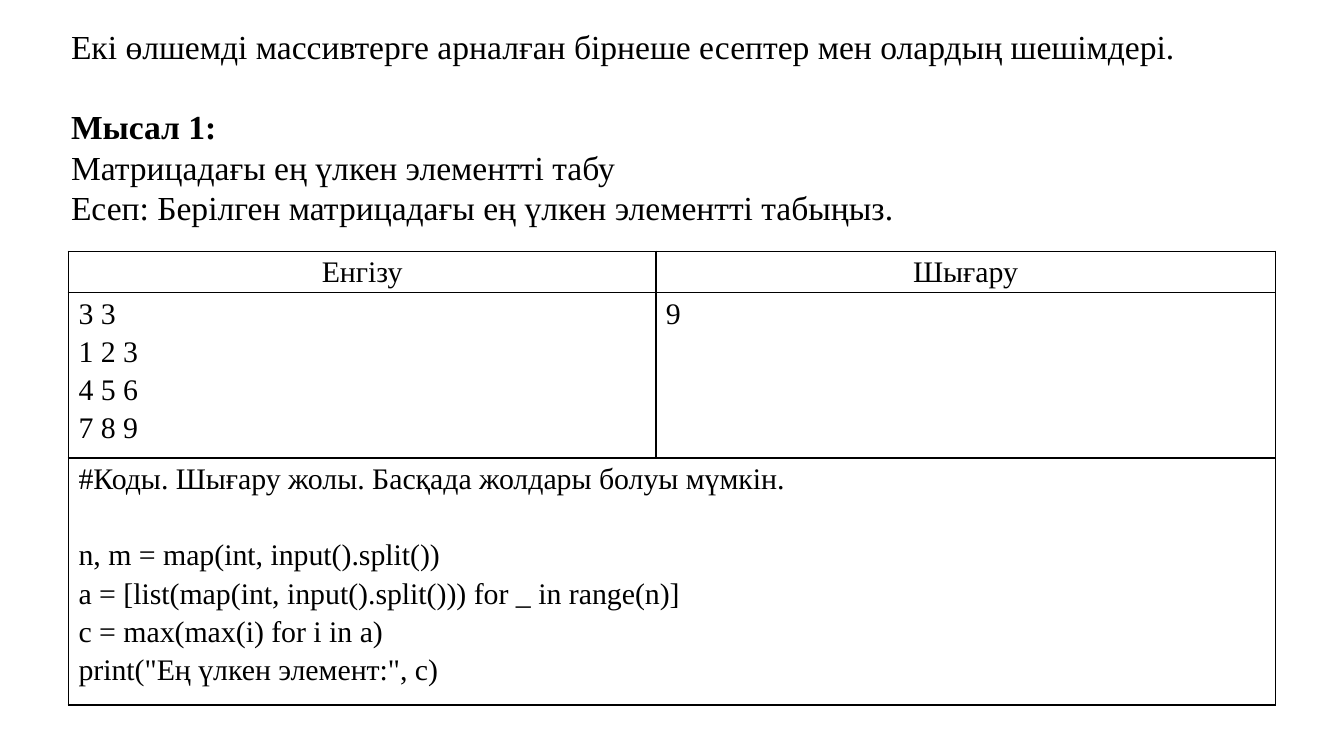
import lxml.etree
import pptx
import pptx.dml.color
import pptx.enum.text
import pptx.oxml.ns
import pptx.util

Inches = pptx.util.Inches
Pt = pptx.util.Pt
FONT = "Times New Roman"
BLACK = "000000"

INTRO = [
    "Екі өлшемді массивтерге арналған бірнеше есептер мен олардың шешімдері.",
    "Мысал 1:",
    "Матрицадағы ең үлкен элементті табу",
    "Есеп: Берілген матрицадағы ең үлкен элементті табыңыз.",
]
HEADERS = ["Енгізу", "Шығару"]
INPUT_LINES = ["3 3", "1 2 3", "4 5 6", "7 8 9"]
OUTPUT_LINES = ["9"]
CODE_LINES = [
    "#Коды. Шығару жолы. Басқада жолдары болуы мүмкін.",
    "n, m = map(int, input().split())",
    "a = [list(map(int, input().split())) for _ in range(n)]",
    "c = max(max(i) for i in a)",
    'print("Ең үлкен элемент:", c)',
]


def color(hex_string):
    return pptx.dml.color.RGBColor.from_string(hex_string)


def write_lines(frame, lines, size, spacing, align=pptx.enum.text.PP_ALIGN.LEFT):
    """Fill the frame with one paragraph per line and return the paragraphs."""
    frame.word_wrap = True
    frame.text = "\n".join(lines)
    for paragraph in frame.paragraphs:
        paragraph.alignment = align
        paragraph.line_spacing = spacing
        paragraph.font.name = FONT
        paragraph.font.size = Pt(size)
        paragraph.font.bold = False
        paragraph.font.color.rgb = color(BLACK)
    return frame.paragraphs


def outline_cell(cell, hex_string, width):
    """Draw all four borders of a cell and leave it unfilled."""
    properties = cell._tc.get_or_add_tcPr()
    qn = pptx.oxml.ns.qn
    for side in ("a:lnL", "a:lnR", "a:lnT", "a:lnB"):
        line = lxml.etree.SubElement(properties, qn(side), w=str(Pt(width)))
        fill = lxml.etree.SubElement(line, qn("a:solidFill"))
        lxml.etree.SubElement(fill, qn("a:srgbClr"), val=hex_string)
    cell.fill.background()


def add_intro(slide, left, top, width, height):
    box = slide.shapes.add_textbox(
        Inches(left), Inches(top), Inches(width), Inches(height))
    paragraphs = write_lines(box.text_frame, INTRO, 18, 1.0)
    example_heading = paragraphs[1]
    example_heading.font.bold = True
    example_heading.space_before = Pt(21.6)


def add_example_table(slide, left, top, column_widths, row_heights):
    table = slide.shapes.add_table(
        len(row_heights), len(column_widths), Inches(left), Inches(top),
        Inches(sum(column_widths)), Inches(sum(row_heights))).table
    table.first_row = False
    table.horz_banding = False
    for column, width in zip(table.columns, column_widths):
        column.width = Inches(width)
    for row, height in zip(table.rows, row_heights):
        row.height = Inches(height)

    # The code spans both columns
    table.cell(2, 0).merge(table.cell(2, 1))
    for cell in table.iter_cells():
        outline_cell(cell, BLACK, 1)
        cell.margin_left = cell.margin_right = Pt(5.4)
        cell.margin_top = cell.margin_bottom = 0

    # Header row
    for column, header in enumerate(HEADERS):
        write_lines(table.cell(0, column).text_frame, [header], 16, 1.15,
                    pptx.enum.text.PP_ALIGN.CENTER)

    # Input, output and code
    write_lines(table.cell(1, 0).text_frame, INPUT_LINES, 16, 1.15)
    write_lines(table.cell(1, 1).text_frame, OUTPUT_LINES, 16, 1.15)
    code = write_lines(table.cell(2, 0).text_frame, CODE_LINES, 16, 1.15)
    code[1].space_before = Pt(20.5)


def main():
    presentation = pptx.Presentation()
    # Widescreen, 16 to 9
    presentation.slide_width = Inches(10)
    presentation.slide_height = Inches(10 * 9 / 16)
    slide = presentation.slides.add_slide(presentation.slide_layouts[6])
    add_intro(slide, 0.43, 0.14, 9.29, 1.62)
    add_example_table(slide, 0.51, 1.87, [4.37, 4.61], [0.3, 1.23, 1.84])
    presentation.save("out.pptx")


if __name__ == "__main__":
    main()
